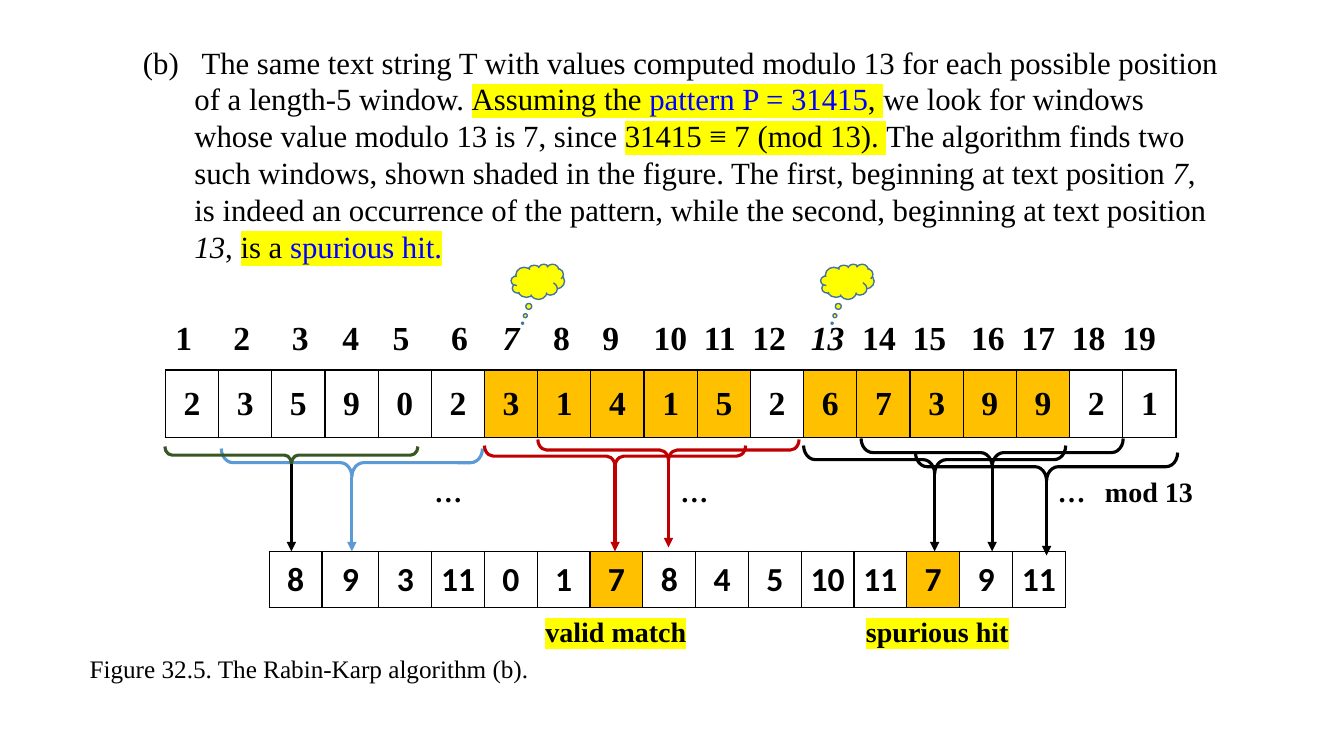
from lxml import etree
from pptx import Presentation
from pptx.dml.color import RGBColor
from pptx.enum.shapes import MSO_CONNECTOR, MSO_SHAPE
from pptx.enum.text import MSO_ANCHOR, PP_ALIGN
from pptx.oxml.ns import qn
from pptx.util import Inches, Pt

LINE = MSO_CONNECTOR.STRAIGHT
BRACE, CLOUD = MSO_SHAPE.RIGHT_BRACE, MSO_SHAPE.CLOUD_CALLOUT
TOP, MIDDLE = MSO_ANCHOR.TOP, MSO_ANCHOR.MIDDLE
CENTER = PP_ALIGN.CENTER

BLACK = RGBColor(0x00, 0x00, 0x00)
WHITE = RGBColor(0xFF, 0xFF, 0xFF)
YELLOW = RGBColor(0xFF, 0xFF, 0x00)
ORANGE = RGBColor(0xFF, 0xC0, 0x00)
BLUE = RGBColor(0x00, 0x00, 0xFF)
SKY = RGBColor(0x5B, 0x9B, 0xD5)
RED = RGBColor(0xC0, 0x00, 0x00)
GREEN = RGBColor(0x38, 0x57, 0x23)
STEEL = RGBColor(0x43, 0x73, 0x9E)
SERIF, SANS = "Times New Roman", "Calibri"

# Run styles: colour, highlight, italic
PLAIN = (BLACK, False, False)
MARK = (BLACK, True, False)
KEY = (BLUE, True, False)
SLANT = (BLACK, False, True)

INTRO = [
    ("(b)\t The same text string T with values computed modulo 13 for each "
     "possible position of a length-5 window. ", PLAIN),
    ("Assuming the ", MARK), ("pattern P = 31415", KEY), (", ", MARK),
    ("we look for windows whose value modulo 13 is 7, since ", PLAIN),
    ("31415 ≡ 7 (mod 13). ", MARK),
    ("The algorithm finds two such windows, shown shaded in the figure. "
     "The first, beginning at text position ", PLAIN),
    ("7", SLANT),
    (", is indeed an occurrence of the pattern, while the second, "
     "beginning at text position ", PLAIN),
    ("13", SLANT), (", ", PLAIN), ("is a ", MARK), ("spurious hit.", KEY),
]
DIGITS = "2359023141526739921"
SHADED = {6, 7, 8, 9, 10, 12, 13, 14, 15, 16}
VALUES = [8, 9, 3, 11, 0, 1, 7, 8, 4, 5, 10, 11, 7, 9, 11]
HITS = {6, 12}
# Centres of the position numbers 2 to 19, from the start of the line
STOPS = [0.66, 1.24, 1.74, 2.24, 2.82, 3.33, 3.83, 4.32, 4.91, 5.4,
         5.89, 6.47, 6.98, 7.48, 8.06, 8.56, 9.06, 9.56]
# Window: centre, brace top, span, depth, brace colour, arrow colour, from, to
WINDOWS = [
    (3.49, 4.45, 2.59, 0.28, SKY, SKY, 4.73, 5.47),
    (6.1, 4.42, 2.59, 0.21, RED, RED, 4.61, 5.47),
    (9.27, 4.42, 2.6, 0.28, BLACK, BLACK, 4.7, 5.47),
    (2.89, 4.43, 2.51, 0.17, GREEN, BLACK, 4.6, 5.47),
    (9.84, 4.35, 2.6, 0.28, BLACK, BLACK, 4.58, 5.47),
    (10.38, 4.49, 2.6, 0.28, BLACK, BLACK, 4.74, 5.51),
    (6.63, 4.36, 2.59, 0.21, RED, RED, 4.57, 5.43),
]


def style(item, **values):
    for name, value in values.items():
        setattr(item, name, value)


def write(para, text, size, face=SERIF, bold=True, look=PLAIN):
    color, mark, slant = look
    run = para.add_run()
    run.text = text
    style(run.font, size=Pt(size), name=face, bold=bold, italic=slant)
    run.font.color.rgb = color
    if mark:
        light = etree.Element(qn("a:highlight"))
        etree.SubElement(light, qn("a:srgbClr"), val=str(YELLOW))
        run.font._element.find(qn("a:solidFill")).addnext(light)


def label(slide, box, runs, size, bold=True, anchor=TOP, wrap=True,
          stops=(), align="l", hang=0):
    """Text box with one paragraph, set out by tab stops."""
    frame = slide.shapes.add_textbox(*map(Inches, box)).text_frame
    style(frame, word_wrap=wrap, vertical_anchor=anchor)
    para = frame.paragraphs[0]
    props = para._p.get_or_add_pPr()
    if hang:
        props.set("marL", str(Inches(hang)))
        props.set("indent", str(-Inches(hang)))
    if stops:
        tabs = etree.SubElement(props, qn("a:tabLst"))
        for stop in stops:
            etree.SubElement(tabs, qn("a:tab"), pos=str(Inches(stop)),
                             algn=align)
    for text, look in runs:
        write(para, text, size, bold=bold, look=look)


def strip(slide, box, items, shaded, face, widths):
    """One-row table; widths are shares of the box."""
    left, top, width, height = box
    grid = slide.shapes.add_table(1, len(items), *map(Inches, box)).table
    grid.rows[0].height = Inches(height)
    for i, item in enumerate(items):
        grid.columns[i].width = Inches(width * widths[i] / sum(widths))
        cell = grid.cell(0, i)
        style(cell, margin_left=Inches(0.07), margin_right=Inches(0.07),
              margin_top=0, margin_bottom=0, vertical_anchor=MIDDLE)
        props = cell._tc.get_or_add_tcPr()
        for side in ("lnL", "lnR", "lnT", "lnB"):
            edge = etree.SubElement(props, qn("a:" + side), w=str(Pt(1)))
            fill = etree.SubElement(edge, qn("a:solidFill"))
            etree.SubElement(fill, qn("a:srgbClr"), val=str(BLACK))
        cell.fill.solid()
        cell.fill.fore_color.rgb = ORANGE if i in shaded else WHITE
        para = cell.text_frame.paragraphs[0]
        para.alignment = CENTER
        write(para, str(item), 24, face)


def window(slide, mid, top, span, depth, color, ink, start, end):
    """Brace under a window, with an arrow to its value."""
    box = (mid - depth / 2, top + depth / 2 - span / 2, depth, span)
    brace = slide.shapes.add_shape(BRACE, *map(Inches, box))
    brace.rotation = 90
    brace.shadow.inherit = False
    brace.adjustments[0] = 0.412
    brace.fill.background()
    arrow = slide.shapes.add_connector(
        LINE, *map(Inches, (mid, start, mid, end)))
    for part, tint in ((brace, color), (arrow, ink)):
        part.line.color.rgb = tint
        part.line.width = Pt(2.25)
    etree.SubElement(arrow.line._get_or_add_ln(), qn("a:tailEnd"),
                     type="triangle")
    etree.SubElement(arrow._element.spPr, qn("a:effectLst"))


def cloud(slide, box):
    shape = slide.shapes.add_shape(CLOUD, *map(Inches, box))
    shape.shadow.inherit = False
    shape.adjustments[0], shape.adjustments[1] = -0.286, 1.176
    shape.fill.solid()
    shape.fill.fore_color.rgb = YELLOW
    shape.line.color.rgb = STEEL
    shape.line.width = Pt(1)


def figure(slide, left, top):
    """Text string, its windows and their values modulo 13."""
    strip(slide, (left, top + 0.58, 10.03, 0.67), DIGITS, SHADED, SERIF,
          [1] * len(DIGITS))
    strip(slide, (left + 1.03, top + 2.38, 7.9, 0.56), VALUES, HITS, SANS,
          [0.52, 0.56] + [0.52] * 13)
    for spec in WINDOWS:
        window(slide, *spec)
    # Position numbers
    marks = [("1", PLAIN)]
    for n in range(2, 20):
        marks.append((f"\t{n}", SLANT if n in (7, 13) else PLAIN))
    label(slide, (left, top, 10.03, 0.5), marks, 24, anchor=MIDDLE,
          stops=STOPS, align="ctr")
    # Notes on the windows and hits
    label(slide, (left, top + 1.56, 10.61, 0.44),
          [("\t…\t…\t…\tmod 13", PLAIN)], 20, anchor=MIDDLE,
          stops=(2.57, 5.01, 8.75, 9.22))
    label(slide, (left + 3.6, top + 2.96, 4.91, 0.44),
          [("\t", PLAIN), ("valid match", MARK), ("\t", PLAIN),
           ("spurious hit", MARK)], 20, stops=(0.07, 3.25))
    for x in (3.43, 6.5):
        cloud(slide, (left + x, top - 0.47, 0.53, 0.35))


def main():
    deck = Presentation()
    style(deck, slide_width=Inches(13.33), slide_height=Inches(7.5))
    slide = deck.slides.add_slide(deck.slide_layouts[6])
    label(slide, (1.32, 0.38, 10.86, 2.31), INTRO, 22, bold=False, hang=0.51)
    figure(slide, 1.64, 3.09)
    label(slide, (0.79, 6.43, 4.73, 0.4),
          [("Figure 32.5. The Rabin-Karp algorithm (b).", PLAIN)], 18,
          bold=False, wrap=False)
    deck.save("out.pptx")


if __name__ == "__main__":
    main()
